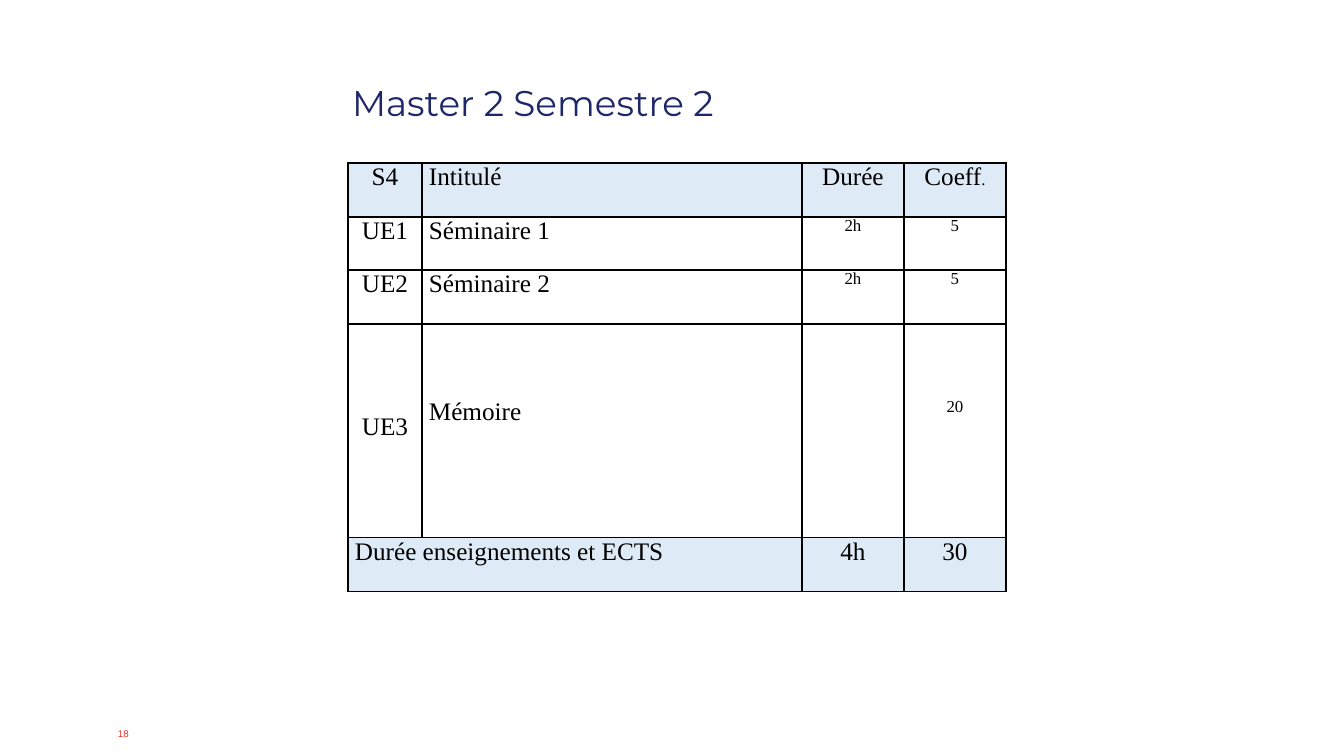
"""Build the slide listing the courses of the second semester of Master 2."""
from lxml import etree
from pptx import Presentation, util as u
from pptx.dml.color import RGBColor
from pptx.enum import text
from pptx.oxml import ns

SCALE = 12192000 / 1344
NAVY = RGBColor(0x1D, 0x27, 0x69)
RED = RGBColor(0xE6, 0x33, 0x2A)
BLACK = RGBColor(0, 0, 0)
PALE_BLUE = RGBColor(0xDE, 0xEA, 0xF6)

COLUMN_WIDTHS = [74, 380, 102, 102]
ROW_HEIGHTS = [54, 53, 54, 214, 54]
COURSES = [
    ["S4", "Intitulé", "Durée", "Coeff"],
    ["UE1", "Séminaire 1", "2h", "5"],
    ["UE2", "Séminaire 2", "2h", "5"],
    ["UE3", "Mémoire", "", "20"],
    ["Durée enseignements et ECTS", "", "4h", "30"],
]
THESIS_ROW = 3
THESIS_TOPS = [89, 74, 0, 74]
TOTAL_ROW = len(COURSES) - 1


def px(length):
    """Turn pixels into EMU."""
    return u.Emu(round(length * SCALE))


def style(paragraph, font_name, size, color, align=text.PP_ALIGN.LEFT):
    """Set the alignment and font of a paragraph."""
    paragraph.alignment = align
    paragraph.font.name = font_name
    paragraph.font.size = u.Pt(size)
    paragraph.font.color.rgb = color


def set_frame(frame, wrap):
    """Anchor text at the bottom with narrow side insets."""
    frame.auto_size = text.MSO_AUTO_SIZE.NONE
    frame.word_wrap = wrap
    frame.vertical_anchor = text.MSO_ANCHOR.BOTTOM
    frame.margin_left = frame.margin_right = px(4)
    frame.margin_top = frame.margin_bottom = 0


def add_title(slide, wording):
    """Place and fill the title placeholder."""
    title = slide.shapes.title
    title.left, title.top, title.width, title.height = map(px, (348, 52, 649, 72))
    set_frame(title.text_frame, True)
    title.text_frame.text = wording
    heading = title.text_frame.paragraphs[0]
    heading.line_spacing = 0.9
    style(heading, "Montserrat", 25.5, NAVY)


def add_page_number(slide, number):
    """Write the page number at the foot of the slide."""
    frame = slide.shapes.add_textbox(*map(px, (114, 728, 25, 12))).text_frame
    set_frame(frame, False)
    frame.text = number
    style(frame.paragraphs[0], "Arial", 7, RED)


def add_borders(cell):
    """Draw a thin black line on each side of a cell."""
    properties = cell._tc.get_or_add_tcPr()
    for side in ("lnL", "lnR", "lnT", "lnB"):
        line = etree.SubElement(properties, ns.qn(f"a:{side}"), w=str(u.Pt(1)))
        fill = etree.SubElement(line, ns.qn("a:solidFill"))
        etree.SubElement(fill, ns.qn("a:srgbClr"), val=str(BLACK))


def fill_cell(cell, wording, row, column):
    """Format one cell of the course table."""
    shaded = row in (0, TOTAL_ROW)
    left_aligned = column == 1 or (row == TOTAL_ROW and column == 0)
    add_borders(cell)
    if shaded:
        cell.fill.solid()
        cell.fill.fore_color.rgb = PALE_BLUE
    else:
        cell.fill.background()
    cell.margin_left = px(7 if left_aligned else 0)
    cell.margin_right = cell.margin_bottom = 0
    cell.margin_top = px(THESIS_TOPS[column] if row == THESIS_ROW else 0)
    cell.text = wording
    align = text.PP_ALIGN.LEFT if left_aligned else text.PP_ALIGN.CENTER
    size = 18 if shaded or column < 2 else 12
    style(cell.text_frame.paragraphs[0], "Times New Roman", size, BLACK, align)


def add_course_table(slide):
    """Add the table of courses, durations and coefficients."""
    frame = slide.shapes.add_table(
        len(COURSES), len(COLUMN_WIDTHS), px(348), px(163),
        px(sum(COLUMN_WIDTHS)), px(sum(ROW_HEIGHTS)))
    table = frame.table
    table.first_row = table.horz_banding = False
    for column, width in zip(table.columns, COLUMN_WIDTHS):
        column.width = px(width)
    for row, height in zip(table.rows, ROW_HEIGHTS):
        row.height = px(height)
    for row, course in enumerate(COURSES):
        for column, wording in enumerate(course):
            fill_cell(table.cell(row, column), wording, row, column)
    table.cell(TOTAL_ROW, 0).merge(table.cell(TOTAL_ROW, 1))
    full_stop = table.cell(0, 3).text_frame.paragraphs[0].add_run()
    full_stop.text = "."
    full_stop.font.size = u.Pt(12)


def main():
    """Build and save the presentation."""
    deck = Presentation()
    deck.slide_width, deck.slide_height = px(1344), px(756)
    slide = deck.slides.add_slide(deck.slide_layouts[5])
    add_page_number(slide, "18")
    add_title(slide, "Master 2 Semestre 2")
    add_course_table(slide)
    deck.save("out.pptx")


if __name__ == "__main__":
    main()
